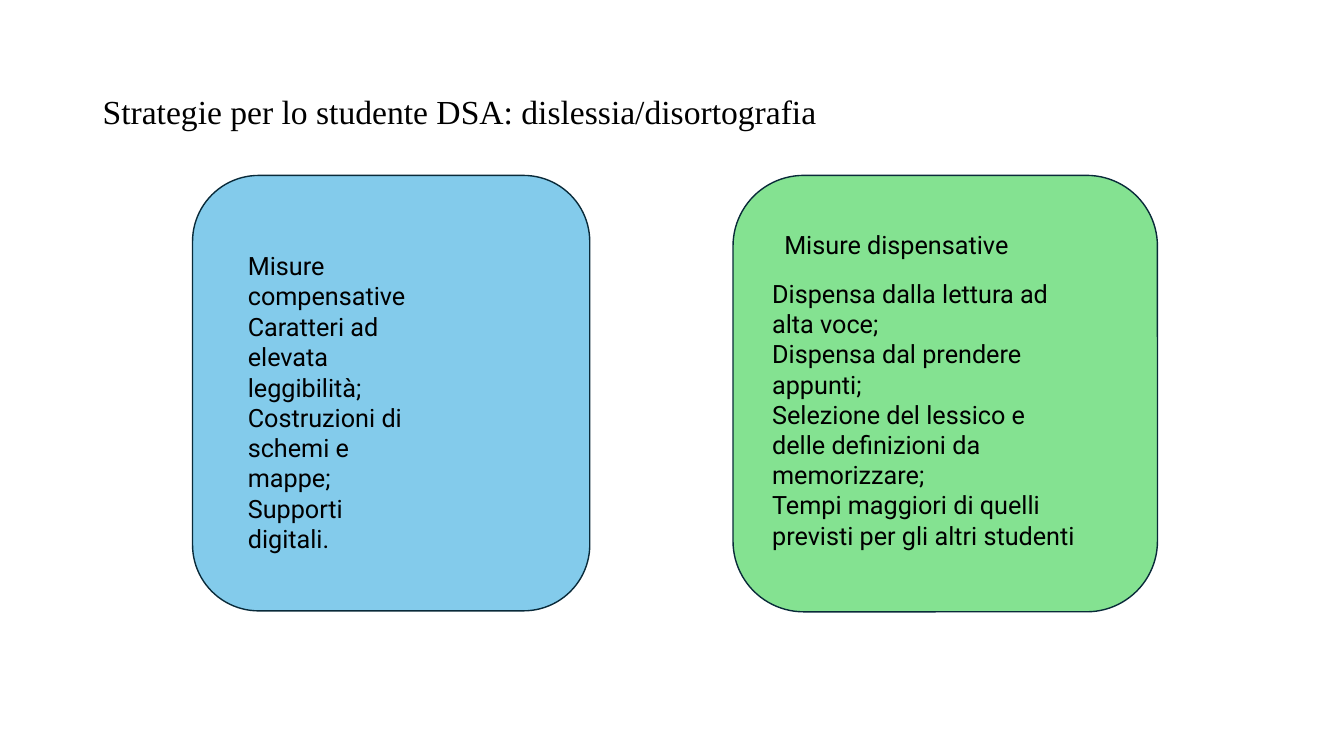
from dataclasses import dataclass

from pptx import Presentation
from pptx.dml.color import RGBColor
from pptx.enum.shapes import MSO_SHAPE
from pptx.enum.text import MSO_ANCHOR
from pptx.slide import Slide
from pptx.util import Inches, Pt

ROUNDED = MSO_SHAPE.ROUNDED_RECTANGLE
TOP = MSO_ANCHOR.TOP
MIDDLE = MSO_ANCHOR.MIDDLE

BLACK = RGBColor(0x00, 0x00, 0x00)
GREEN = RGBColor(0x84, 0xE2, 0x91)
BLUE = RGBColor(0x83, 0xCB, 0xEB)
OUTLINE = RGBColor(0x09, 0x2A, 0x39)

BODY_FONT = "Roboto"
TITLE_FONT = "Times New Roman"


@dataclass(frozen=True)
class Box:
    left: float
    top: float
    width: float
    height: float

    def lengths(self) -> tuple[int, int, int, int]:
        return (Inches(self.left), Inches(self.top),
                Inches(self.width), Inches(self.height))


@dataclass(frozen=True)
class MeasureCard:
    frame: Box
    fill: RGBColor
    heading: str
    heading_box: Box
    measures: tuple[str, ...]
    measures_box: Box


CARDS = (
    MeasureCard(
        frame=Box(7.27, 1.74, 4.21, 4.33),
        fill=GREEN,
        heading="Misure dispensative",
        heading_box=Box(7.68, 2.23, 3.29, 0.4),
        measures=(
            "Dispensa dalla lettura ad alta voce;",
            "Dispensa dal prendere appunti;",
            "Selezione del lessico e delle definizioni da memorizzare;",
            "Tempi maggiori di quelli previsti per gli altri studenti",
        ),
        measures_box=Box(7.56, 2.71, 3.29, 2.52),
    ),
    MeasureCard(
        frame=Box(1.91, 1.74, 3.94, 4.32),
        fill=BLUE,
        heading="Misure compensative",
        heading_box=Box(2.36, 2.43, 2.5, 0.4),
        measures=(
            "Caratteri ad elevata leggibilità;",
            "Costruzioni di schemi e mappe;",
            "Supporti digitali.",
        ),
        measures_box=Box(2.36, 3.04, 2, 2.22),
    ),
)


def add_text(slide: Slide, box: Box, *lines: str, font: str = BODY_FONT,
             size: float = 18, anchor: MSO_ANCHOR = TOP,
             line_spacing: float = 1.0) -> None:
    text_frame = slide.shapes.add_textbox(*box.lengths()).text_frame
    text_frame.word_wrap = True
    text_frame.vertical_anchor = anchor
    text_frame.text = "\n".join(lines)
    for paragraph in text_frame.paragraphs:
        paragraph.line_spacing = line_spacing
        for run in paragraph.runs:
            run.font.name = font
            run.font.size = Pt(size)
            run.font.color.rgb = BLACK


def add_card(slide: Slide, card: MeasureCard) -> None:
    shape = slide.shapes.add_shape(ROUNDED, *card.frame.lengths())
    shape.shadow.inherit = False
    shape.fill.solid()
    shape.fill.fore_color.rgb = card.fill
    shape.line.color.rgb = OUTLINE
    shape.line.width = Pt(1)
    add_text(slide, card.heading_box, card.heading)
    add_text(slide, card.measures_box, *card.measures)


def main() -> None:
    presentation = Presentation()
    presentation.slide_width = Inches(13.33)
    presentation.slide_height = Inches(7.5)
    slide = presentation.slides.add_slide(presentation.slide_layouts[6])
    add_text(slide, Box(0.92, 0.4, 11.5, 1.45),
             "Strategie per lo studente DSA: dislessia/disortografia",
             font=TITLE_FONT, size=24, anchor=MIDDLE, line_spacing=0.9)
    for card in CARDS:
        add_card(slide, card)
    presentation.save("out.pptx")


if __name__ == "__main__":
    main()
